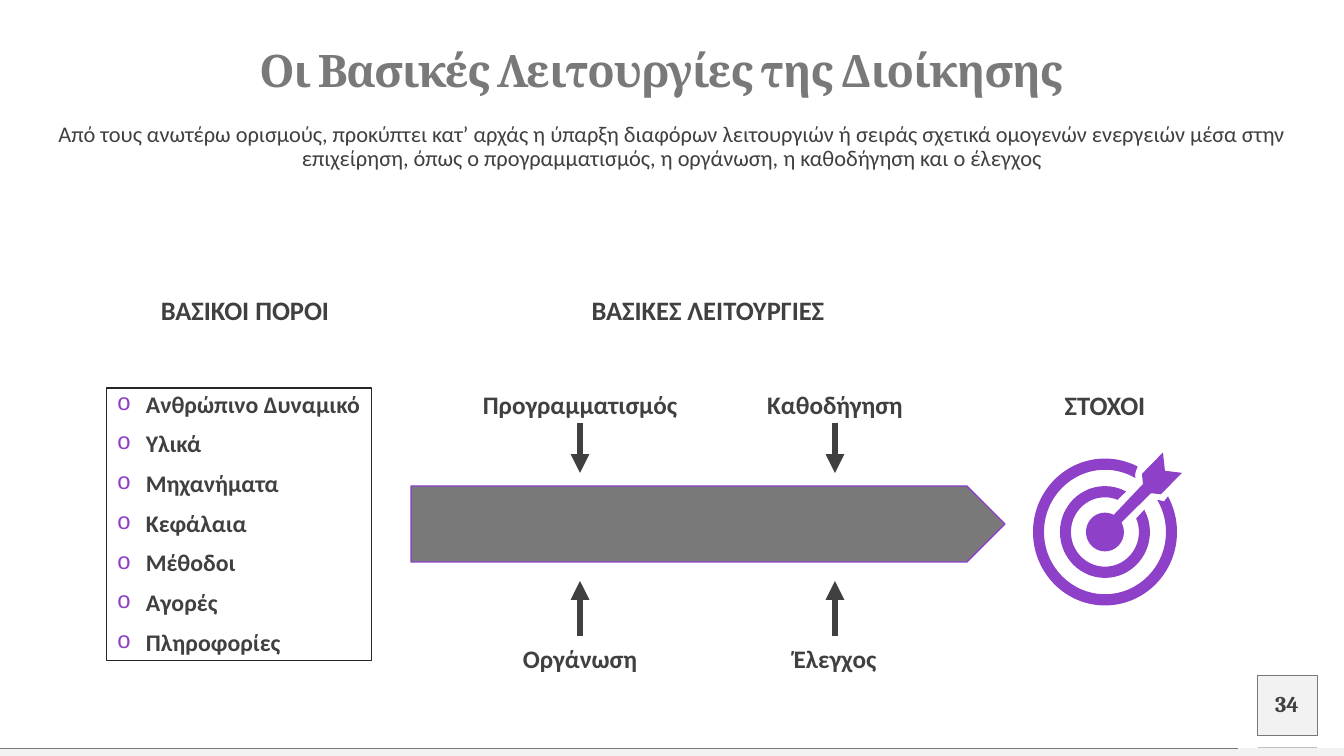
import math

import pptx
import pptx.dml.color
import pptx.enum.shapes
import pptx.enum.text
import pptx.oxml
import pptx.oxml.ns
import pptx.util

PX = 914400 / 100.8
COLORS = {
    "purple": "8E40C8", "gray": "797979", "text": "404040",
    "frame": "262626", "pale": "F2F2F2", "rule": "BFBFBF",
}
SHAPES = pptx.enum.shapes.MSO_SHAPE
ANCHORS = pptx.enum.text.MSO_ANCHOR
ALIGNMENTS = pptx.enum.text.PP_ALIGN
NAMESPACE = pptx.oxml.ns.nsdecls("a")


def write_text(shape, lines, size, font="Calibri", bold=True, color="text",
               anchor=ANCHORS.TOP, inset=None, bullet=False):
    """Fill a shape with centred lines, or with a left-aligned bulleted list."""
    frame = shape.text_frame
    frame.word_wrap = True
    frame.auto_size = pptx.enum.text.MSO_AUTO_SIZE.NONE
    frame.vertical_anchor = anchor
    if inset is not None:
        frame.margin_left = frame.margin_right = inset
        frame.margin_top = frame.margin_bottom = inset
    frame.text = "\n".join(lines)
    for index, paragraph in enumerate(frame.paragraphs):
        properties = paragraph._p.get_or_add_pPr()
        indent = round(29 * PX) if bullet else 0
        properties.set("marL", str(indent))
        properties.set("indent", str(-indent))
        paragraph.alignment = ALIGNMENTS.LEFT if bullet else ALIGNMENTS.CENTER
        paragraph.line_spacing = 0.9
        paragraph.space_before = pptx.util.Pt(10 if index else 0)
        marks = ["<a:buNone {}/>"]
        if bullet:
            marks = [
                '<a:buClr {}><a:srgbClr val="' + COLORS["purple"] + '"/></a:buClr>',
                '<a:buFont {} typeface="Courier New" pitchFamily="49" charset="0"/>',
                '<a:buChar {} char="o"/>',
            ]
        for mark in marks:
            properties.append(pptx.oxml.parse_xml(mark.format(NAMESPACE)))
        for run in paragraph.runs:
            run.font.name = font
            run.font.size = pptx.util.Pt(size)
            run.font.bold = bold
            run.font.color.rgb = pptx.dml.color.RGBColor.from_string(COLORS[color])


def arc(radius, angles):
    """Return the start of an arc as a line step, then one Bézier step per pair of angles."""
    steps = [[(radius * math.cos(math.radians(angles[0])),
               radius * math.sin(math.radians(angles[0])))]]
    for start, end in zip(angles, angles[1:]):
        first, last = math.radians(start), math.radians(end)
        reach = radius * 4 / 3 * math.tan((last - first) / 4)
        x1, y1 = radius * math.cos(first), radius * math.sin(first)
        x2, y2 = radius * math.cos(last), radius * math.sin(last)
        steps.append([
            (x1 - reach * math.sin(first), y1 + reach * math.cos(first)),
            (x2 + reach * math.sin(last), y2 - reach * math.cos(last)),
            (x2, y2)])
    return steps


presentation = pptx.Presentation()
presentation.slide_width = round(1344 * PX)
presentation.slide_height = round(756 * PX)
slide = presentation.slides.add_slide(presentation.slide_layouts[1])
shapes = slide.shapes

# Title and introduction
title, introduction = slide.placeholders
for placeholder, box in ((title, (36, 49, 1250, 47)), (introduction, (47, 123, 1250, 39))):
    placeholder.left, placeholder.top, placeholder.width, placeholder.height = (
        round(value * PX) for value in box)
write_text(title, ["Οι Βασικές Λειτουργίες της Διοίκησης"], 32, font="Cambria",
           color="gray", anchor=ANCHORS.MIDDLE, inset=0)
title.text_frame.paragraphs[0].runs[0].font._element.set("spc", "-100")
write_text(introduction, [
    "Από τους ανωτέρω ορισμούς, προκύπτει κατ’ αρχάς η ύπαρξη διαφόρων λειτουργιών "
    "ή σειράς σχετικά ομογενών ενεργειών μέσα στην επιχείρηση, όπως ο "
    "προγραμματισμός, η οργάνωση, η καθοδήγηση και ο έλεγχος"], 16, bold=False, inset=0)

# Footer, process bar and resource frame
boxes = {}
for name, preset, box, fill, line, width in (
    ("footer", SHAPES.RECTANGLE, (0, 748, 1344, 8), "pale", None, 0),
    ("number", SHAPES.RECTANGLE, (1257, 675, 60, 60), "pale", "gray", 0.25),
    ("process", SHAPES.PENTAGON, (411, 486, 594, 76), "gray", "purple", 1),
    ("resources", SHAPES.RECTANGLE, (107, 388, 265, 273), None, "frame", 0.75),
):
    shape = shapes.add_shape(preset, *(round(value * PX) for value in box))
    shape.shadow.inherit = False
    shape.fill.background()
    shape.line.fill.background()
    if fill:
        shape.fill.solid()
        shape.fill.fore_color.rgb = pptx.dml.color.RGBColor.from_string(COLORS[fill])
    if line:
        shape.line.color.rgb = pptx.dml.color.RGBColor.from_string(COLORS[line])
        shape.line.width = pptx.util.Pt(width)
    boxes[name] = shape
write_text(boxes["number"], ["34"], 16, font="Cambria", anchor=ANCHORS.MIDDLE, inset=0)
write_text(boxes["resources"], [
    "Ανθρώπινο Δυναμικό", "Υλικά", "Μηχανήματα", "Κεφάλαια", "Μέθοδοι",
    "Αγορές", "Πληροφορίες"], 17, anchor=ANCHORS.MIDDLE, bullet=True)

# Headings and function labels, placed by their centre
for label, center, top, size in (
    ("ΒΑΣΙΚΟΙ ΠΟΡΟΙ", 245, 293, 19),
    ("ΒΑΣΙΚΕΣ ΛΕΙΤΟΥΡΓΙΕΣ", 708, 293, 19),
    ("ΣΤΟΧΟΙ", 1105, 388, 19),
    ("Προγραμματισμός", 580, 388, 18),
    ("Καθοδήγηση", 835, 388, 18),
    ("Οργάνωση", 580, 642, 18),
    ("Έλεγχος", 835, 642, 18),
):
    label_box = shapes.add_textbox(
        *(round(value * PX) for value in (center - 128, top, 256, 56)))
    write_text(label_box, [label], size)

# Footer rules and arrows into the process bar
lines = [((0, 748, 1238, 748), "gray", 0.25, False),
         ((1258, 747, 1317, 747), "rule", 0.5, False)]
for center in (580, 835):
    for start, end in ((423, 473), (636, 581)):
        lines.append(((center, start, center, end), "text", 4.5, True))
for ends, color, width, has_head in lines:
    connector = shapes.add_connector(
        pptx.enum.shapes.MSO_CONNECTOR.STRAIGHT, *(round(value * PX) for value in ends))
    connector.line.color.rgb = pptx.dml.color.RGBColor.from_string(COLORS[color])
    connector.line.width = pptx.util.Pt(width)
    if has_head:
        connector.line._get_or_add_ln().append(
            pptx.oxml.parse_xml(f'<a:tailEnd {NAMESPACE} type="triangle"/>'))
    connector._element.spPr.append(pptx.oxml.parse_xml(f"<a:effectLst {NAMESPACE}/>"))

# Target: the bullseye joined to its dart, then two open rings
target_x, target_y, stretch = 1105, 532, 1.02
quarters = [0, 90, 180, 270]
dart = [(9, -17), (38, -47), (37, -57), (58, -78), (60, -60), (77, -58), (56, -37),
        (46, -38), (16, -9)]
outlines = (
    arc(19, [-29, *quarters, 298]) + [[point] for point in dart],
    arc(72, [-29, *quarters, 297]) + [[(31, -60)], [(30, -56)]]
    + arc(61, [300, *quarters[::-1], -31]) + [[(55, -31)], [(59, -30)]],
    arc(45, [-29, *quarters, 298]) + arc(34, [292, *quarters[::-1], -23]),
)
for outline in outlines:
    points = [(round((target_x + x) * PX), round((target_y + y * stretch) * PX))
              for step in outline for x, y in step]
    builder = shapes.build_freeform(*points[0], scale=1.0)
    builder.add_line_segments(points[1:], close=True)
    shape = builder.convert_to_shape()
    shape.shadow.inherit = False
    shape.fill.solid()
    shape.fill.fore_color.rgb = pptx.dml.color.RGBColor.from_string(COLORS["purple"])
    shape.line.fill.background()
    segments = iter(shape._element.findall(".//" + pptx.oxml.ns.qn("a:lnTo")))
    for step in outline[1:]:
        parts = [next(segments) for point in step]
        if len(parts) == 3:
            curve = pptx.oxml.parse_xml(f"<a:cubicBezTo {NAMESPACE}/>")
            parts[0].addprevious(curve)
            for part in parts:
                curve.append(part[0])
                part.getparent().remove(part)

presentation.save("out.pptx")
